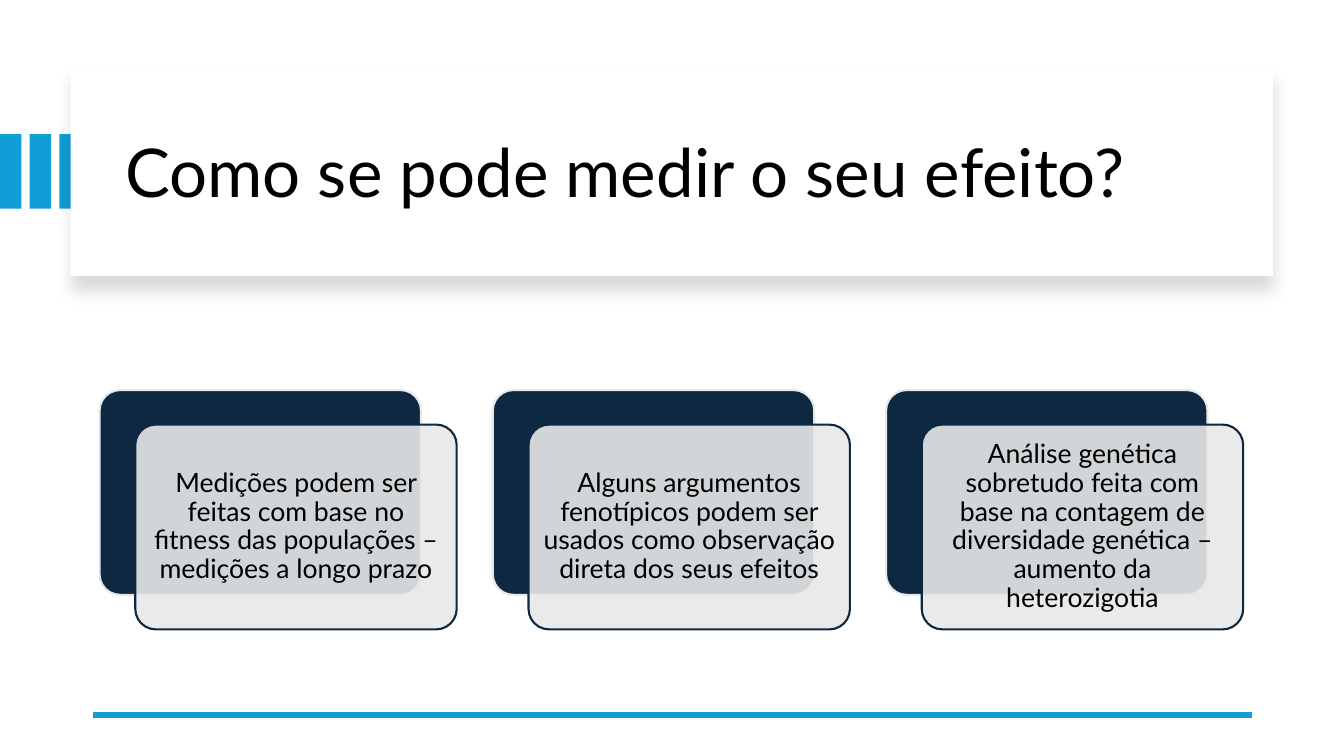
"""Build a slide with a framed title and three layered cards on measuring an effect."""
from lxml import etree
from pptx import Presentation
from pptx.dml.color import RGBColor
from pptx.enum.shapes import MSO_CONNECTOR, MSO_SHAPE
from pptx.enum.text import MSO_ANCHOR, MSO_AUTO_SIZE, PP_ALIGN
from pptx.oxml.ns import qn
from pptx.util import Cm, Pt

RECTANGLE = MSO_SHAPE.RECTANGLE
ROUNDED = MSO_SHAPE.ROUNDED_RECTANGLE
STRAIGHT = MSO_CONNECTOR.STRAIGHT
MIDDLE = MSO_ANCHOR.MIDDLE
NO_AUTOFIT = MSO_AUTO_SIZE.NONE
LEFT, CENTER = PP_ALIGN.LEFT, PP_ALIGN.CENTER

BLACK = RGBColor(0x00, 0x00, 0x00)
WHITE = RGBColor(0xFF, 0xFF, 0xFF)
BLUE = RGBColor(0x0F, 0x9E, 0xD5)
NAVY = RGBColor(0x0E, 0x28, 0x41)
GRAY = RGBColor(0xE8, 0xE8, 0xE8)

FONT = "Lato"
TITLE = "Como se pode medir o seu efeito?"
CARDS = [
    "Medições podem ser feitas com base no fitness das populações – medições a longo prazo",
    "Alguns argumentos fenotípicos podem ser usados como observação direta dos seus efeitos",
    "Análise genética sobretudo feita com base na contagem de diversidade genética – aumento da heterozigotia",
]
CARD_LEFT, CARD_TOP, CARD_WIDTH, CARD_HEIGHT = 2.51, 9.83, 8.1, 5.16
CARD_STEP = 9.91
FRONT_RIGHT, FRONT_DOWN = 0.9, 0.87
CARD_FRAME = {
    "word_wrap": True,
    "vertical_anchor": MIDDLE,
    "margin_left": Cm(0.2),
    "margin_right": Cm(0.2),
    "margin_top": Cm(0.2),
    "margin_bottom": Cm(0.2),
}
TITLE_FRAME = {"word_wrap": True, "vertical_anchor": MIDDLE, "auto_size": NO_AUTOFIT}


def add_box(page, preset, place, fill, line=None):
    """Add a filled shape at a place given in centimetres."""
    box = page.shapes.add_shape(preset, *[Cm(length) for length in place])
    box.shadow.inherit = False
    box.fill.solid()
    box.fill.fore_color.rgb = fill
    if line is None:
        box.line.fill.background()
    else:
        box.line.color.rgb = line
        box.line.width = Pt(1.5)
    return box


def write_text(box, text, size, alignment, frame_format):
    """Write one formatted paragraph into a shape."""
    frame = box.text_frame
    for name, value in frame_format.items():
        setattr(frame, name, value)
    para = frame.paragraphs[0]
    para.alignment = alignment
    para.line_spacing = 0.9
    span = para.add_run()
    span.text = text
    for name, value in {"name": FONT, "size": Pt(size), "bold": False}.items():
        setattr(span.font, name, value)
    span.font.color.rgb = BLACK


deck = Presentation()
deck.slide_width, deck.slide_height = Cm(33.87), Cm(19.05)
page = deck.slides.add_slide(deck.slide_layouts[5])

for index in range(3):
    add_box(page, RECTANGLE, (0.75 * index, 3.38, 0.54, 1.88), BLUE)

panel = add_box(page, RECTANGLE, (1.78, 1.7, 30.3, 5.26), WHITE)
effects = panel.element.spPr.find(qn("a:effectLst"))
shadow = etree.SubElement(effects, qn("a:outerShdw"), blurRad=str(Pt(11)),
                          dist=str(Pt(10)), dir="5400000", algn="t", rotWithShape="0")
shadow_color = etree.SubElement(shadow, qn("a:srgbClr"), val=str(BLACK))
etree.SubElement(shadow_color, qn("a:alpha"), val="15000")

title = page.shapes.title
title.left, title.top, title.width, title.height = Cm(2.9), Cm(2.26), Cm(28.27), Cm(4.32)
write_text(title, TITLE, 48, LEFT, TITLE_FRAME)
panel.element.addnext(title.element)

rule = page.shapes.add_connector(STRAIGHT, Cm(31.55), Cm(18.01), Cm(2.34), Cm(18.01))
rule.line.color.rgb = BLUE
rule.line.width = Pt(4.5)
etree.SubElement(rule.element.spPr, qn("a:effectLst"))

for index, text in enumerate(CARDS):
    left = CARD_LEFT + CARD_STEP * index
    back = add_box(page, ROUNDED, (left, CARD_TOP, CARD_WIDTH, CARD_HEIGHT), NAVY, GRAY)
    front_place = (left + FRONT_RIGHT, CARD_TOP + FRONT_DOWN, CARD_WIDTH, CARD_HEIGHT)
    front = add_box(page, ROUNDED, front_place, GRAY, NAVY)
    for card in (back, front):
        card.adjustments[0] = 0.1
    front_color = front.element.spPr.find(qn("a:solidFill")).find(qn("a:srgbClr"))
    etree.SubElement(front_color, qn("a:alpha"), val="90000")
    write_text(front, text, 19, CENTER, CARD_FRAME)

deck.save("out.pptx")
